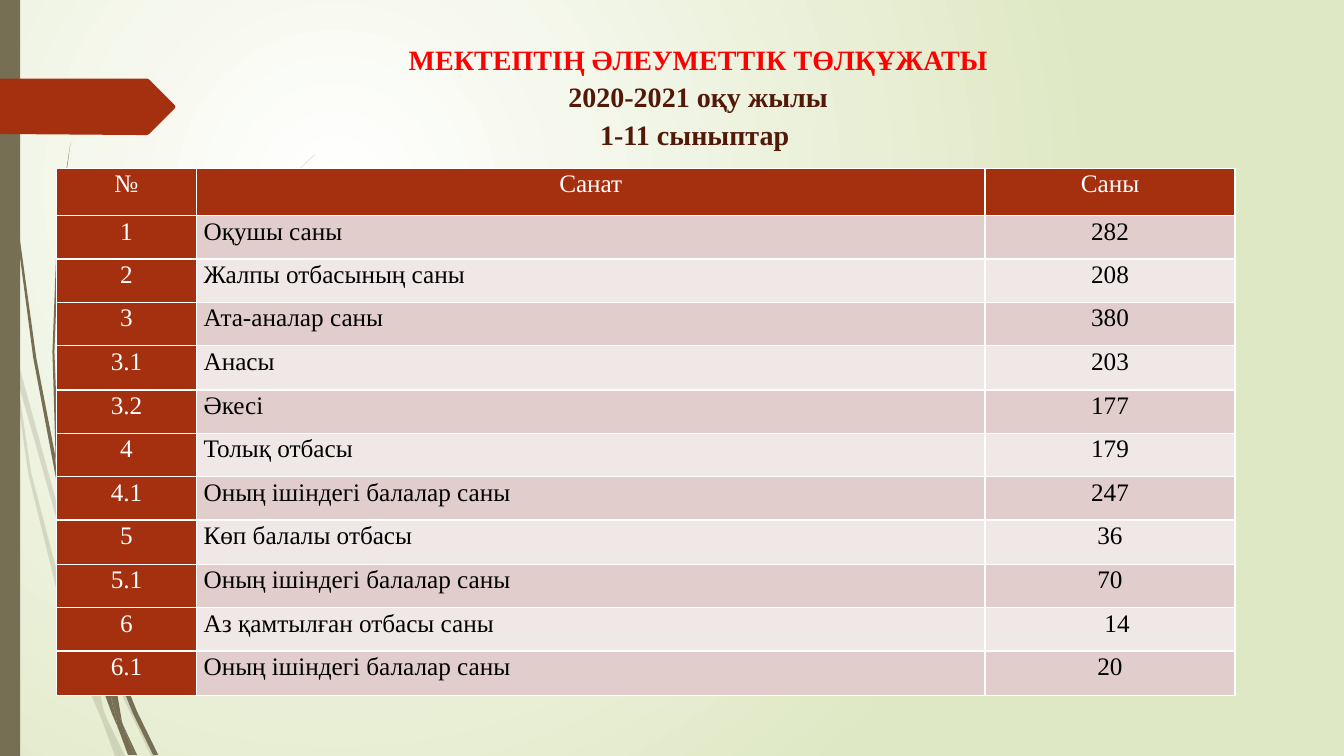
"""Build the school social passport slide: wisp decoration, title and table."""
from lxml import etree
from pptx import Presentation
from pptx import util as u
from pptx.dml.color import RGBColor
from pptx.enum import shapes, text
from pptx.oxml import parse_xml
from pptx.oxml.ns import nsdecls, qn

PX = 9144
FONT = "Times New Roman"
WHITE = RGBColor(0xFF, 0xFF, 0xFF)
BLACK = RGBColor(0, 0, 0)
RED = RGBColor(0xFF, 0, 0)
BROWN = RGBColor(0x52, 0x18, 0x08)
RUST = RGBColor(0xA5, 0x30, 0x10)
OLIVE = RGBColor(0x76, 0x6F, 0x54)
PALE_GREEN = RGBColor(0xDF, 0xE8, 0xC4)
ROSE = RGBColor(0xE1, 0xCD, 0xCC)
PALE_ROSE = RGBColor(0xF0, 0xE8, 0xE7)

PALE_WISPS = [
    [(11, 350), (9, 322), (0, 282), (0, 299), (10, 344)],
    [(58, 522), (84, 599), (85, 586), (62, 520), (14, 345), (17, 376)],
    [(92, 607), (88, 596), (88, 610), (123, 694), (150, 750), (155, 750), (127, 692)],
    [(119, 750), (124, 750), (105, 711)],
    [(93, 683), (70, 619), (31, 469), (17, 376), (11, 350), (28, 470), (65, 621),
     (92, 693), (101, 714), (99, 707)],
    [(84, 599), (87, 646), (93, 683), (96, 692), (105, 711), (103, 706), (91, 646),
     (88, 610), (88, 608)],
    [(88, 584), (95, 522), (110, 462), (132, 404), (160, 349), (192, 295), (229, 245),
     (268, 198), (290, 175), (312, 154), (312, 153), (289, 175), (268, 197), (228, 244),
     (190, 294), (158, 348), (130, 402), (107, 461), (91, 521), (85, 584), (85, 586),
     (88, 596)],
    [(101, 714), (114, 750), (119, 750)],
    [(88, 608), (88, 610), (88, 596), (85, 586), (84, 599)],
    [(96, 692), (93, 683), (99, 707), (101, 714), (119, 750), (105, 711)],
]
DARK_WISPS = [
    [(7, 110), (17, 233), (33, 355), (56, 477), (57, 481), (55, 457), (55, 453), (36, 355),
     (19, 232), (8, 109), (5, 48), (4, 0), (3, 0), (4, 48)],
    [(88, 592), (106, 645), (106, 633), (106, 631), (93, 590), (60, 472), (64, 505)],
    [(113, 649), (110, 641), (111, 656), (132, 708), (152, 749), (157, 749), (136, 706)],
    [(110, 691), (98, 657), (72, 556), (64, 505), (57, 477), (68, 557), (93, 659),
     (111, 708), (117, 722), (116, 717)],
    [(60, 472), (58, 453), (54, 349), (58, 245), (63, 193), (70, 141), (62, 193), (56, 245),
     (52, 349), (55, 449)],
    [(133, 749), (136, 749), (122, 719)],
    [(57, 477), (64, 505), (60, 472), (55, 449), (55, 453)],
    [(111, 633), (115, 592), (125, 552), (140, 513), (158, 476), (180, 440), (205, 406),
     (231, 374), (245, 359), (261, 344), (260, 344), (245, 358), (231, 373), (204, 405),
     (178, 439), (156, 474), (137, 512), (122, 551), (111, 591), (106, 631), (110, 641)],
    [(117, 722), (127, 749), (131, 749)],
    [(106, 645), (110, 691), (116, 706), (122, 719), (121, 716), (111, 656), (109, 651)],
    [(106, 645), (109, 651), (111, 656), (110, 641), (106, 631), (106, 633)],
    [(116, 706), (110, 691), (116, 717), (117, 722), (130, 749), (133, 749), (122, 719)],
]
PAGE_ARROW = [(0, 78), (146, 78), (148, 79), (173, 104), (174, 106), (173, 108), (148, 133),
              (146, 134), (136, 134), (0, 133)]
TITLE = [("МЕКТЕПТІҢ ӘЛЕУМЕТТІК ТӨЛҚҰЖАТЫ", RED), ("2020-2021 оқу жылы", BROWN),
         ("1-11 сыныптар ", BROWN)]
ROWS = [
    ("№", "Санат", "Саны"),
    ("1", "Оқушы саны", "282"),
    ("2", "Жалпы отбасының саны", "208"),
    ("3", "Ата-аналар саны", "380"),
    ("3.1", "Анасы", "203"),
    ("3.2", "Әкесі", "177"),
    ("4", "Толық отбасы", "179"),
    ("4.1", "Оның ішіндегі балалар саны", "247"),
    ("5", "Көп балалы отбасы", "36"),
    ("5.1", "Оның ішіндегі балалар саны", "70"),
    ("6", "Аз қамтылған отбасы саны", "14"),
    ("6.1", "Оның ішіндегі балалар саны", "20"),
]
COLUMNS = [139, 782, 248]
HEADER_HEIGHT, BODY_HEIGHT = 47, 476


def paint(sp, color):
    sp.shadow.inherit = False
    sp.fill.solid()
    sp.fill.fore_color.rgb = color
    sp.line.fill.background()


def add_outline(points, color):
    builder = s.shapes.build_freeform(*points[0], scale=PX)
    builder.add_line_segments(points[1:], close=True)
    sp = builder.convert_to_shape()
    paint(sp, color)
    return sp


prs = Presentation()
prs.slide_width, prs.slide_height = 1333 * PX, 750 * PX
s = prs.slides.add_slide(prs.slide_layouts[6])

fill = s.background.fill
fill.gradient()
for stop, position, color in zip(fill.gradient_stops, (0, 1), (WHITE, PALE_GREEN)):
    stop.position = position
    stop.color.rgb = color
lin = next(s.element.iter(qn("a:lin")))
lin.getparent().replace(lin, parse_xml(
    f'<a:path {nsdecls("a")} path="circle">'
    '<a:fillToRect l="50000" t="50000" r="100000" b="100000"/></a:path>'))

for points in PALE_WISPS:
    sp = add_outline(points, OLIVE)
    color = next(sp.element.spPr.iter(qn("a:srgbClr")))
    etree.SubElement(color, qn("a:alpha"), val="20000")
for points in DARK_WISPS:
    add_outline(points, OLIVE)
side_bar = s.shapes.add_shape(shapes.MSO_SHAPE.RECTANGLE, 0, 0, 20 * PX, 750 * PX)
paint(side_bar, OLIVE)
add_outline(PAGE_ARROW, RUST)

tf = s.shapes.add_textbox(359 * PX, 33 * PX, 667 * PX, 118 * PX).text_frame
tf.word_wrap = True
tf.text = "\n".join(line for line, color in TITLE)
for p, (line, color) in zip(tf.paragraphs, TITLE):
    p.alignment = text.PP_ALIGN.CENTER
    p.line_spacing = 1.12
    font = p.runs[0].font
    font.name, font.size, font.bold = FONT, u.Pt(20), True
    font.color.rgb = color

table = s.shapes.add_table(len(ROWS), len(COLUMNS), 56 * PX, 167 * PX, sum(COLUMNS) * PX,
                           (HEADER_HEIGHT + BODY_HEIGHT) * PX).table
for column, width in zip(table.columns, COLUMNS):
    column.width = width * PX
body_rows = len(ROWS) - 1
for i, row in enumerate(ROWS):
    if i == 0:
        height = HEADER_HEIGHT
    else:
        height = BODY_HEIGHT * i // body_rows - BODY_HEIGHT * (i - 1) // body_rows
    table.rows[i].height = height * PX
    for j, value in enumerate(row):
        cell = table.cell(i, j)
        dark = i == 0 or j == 0
        cell.margin_left = (21 if value == "14" else 7) * PX
        cell.margin_right = 7 * PX
        cell.margin_top = cell.margin_bottom = 0
        cell.fill.solid()
        cell.fill.fore_color.rgb = RUST if dark else ROSE if i % 2 else PALE_ROSE
        tcPr = cell._tc.get_or_add_tcPr()
        for k, side in enumerate("LRTB"):
            tcPr.insert(k, parse_xml(
                f'<a:ln{side} {nsdecls("a")} w="12700"><a:solidFill>'
                f'<a:srgbClr val="{WHITE}"/></a:solidFill></a:ln{side}>'))
        cell.text_frame.text = value
        p = cell.text_frame.paragraphs[0]
        p.line_spacing = 1.07
        p.alignment = text.PP_ALIGN.LEFT if i and j == 1 else text.PP_ALIGN.CENTER
        font = p.runs[0].font
        font.name, font.size, font.bold = FONT, u.Pt(18), False
        font.color.rgb = WHITE if dark else BLACK

prs.save("out.pptx")
